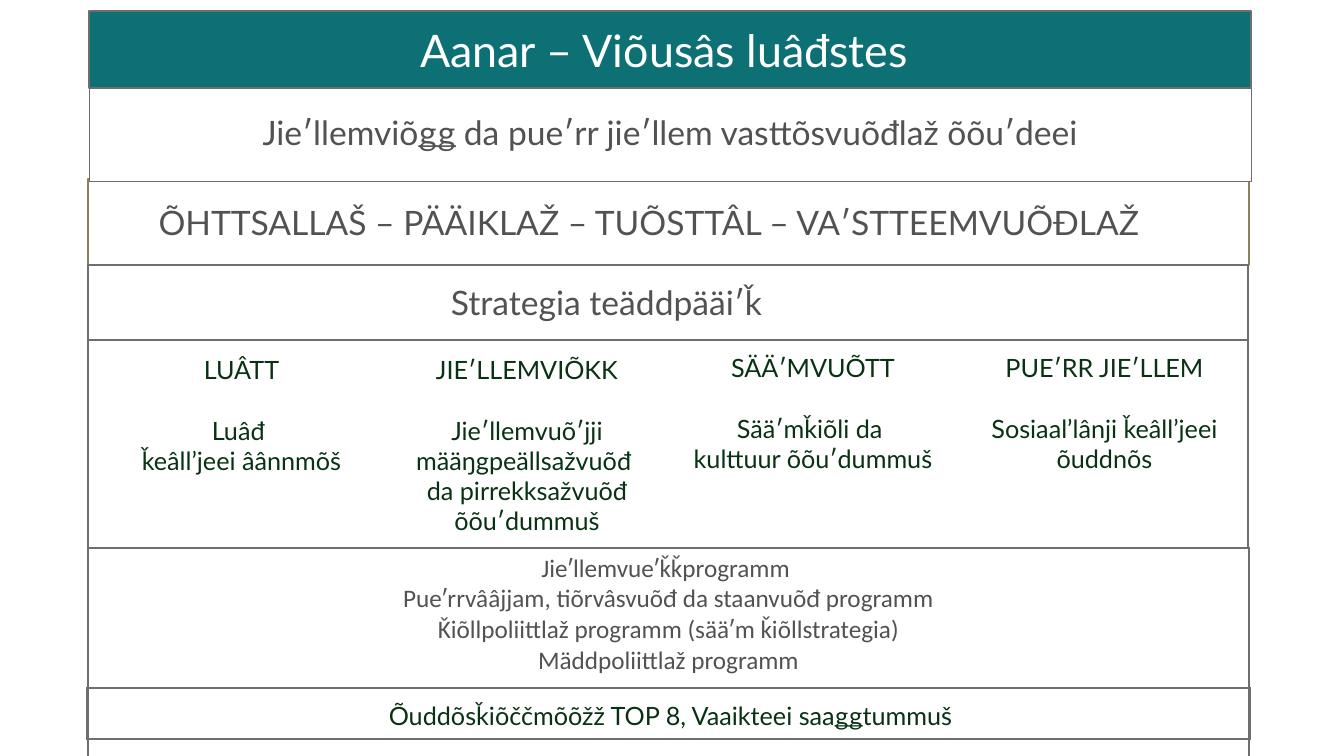
from dataclasses import dataclass

from lxml.etree import SubElement
from pptx import Presentation
from pptx.dml.color import RGBColor
from pptx.enum.shapes import MSO_SHAPE
from pptx.enum.text import MSO_ANCHOR, MSO_AUTO_SIZE, PP_ALIGN
from pptx.oxml.ns import qn
from pptx.util import Pt

PX = 914400 / 100.8
TITLE_ONLY = 5


@dataclass(frozen=True)
class Theme:
    font: str = "Lato"
    programme_font: str = "Calibri"
    white: str = "FFFFFF"
    teal: str = "0D7075"
    grey_text: str = "525252"
    green_text: str = "083213"
    rule: str = "6E6E6E"
    values_rule: str = "8B8160"
    title_size: int = 32
    heading_size: int = 24
    body_size: int = 18
    pillar_gap: int = 22


def px(*lengths):
    return [round(length * PX) for length in lengths]


def write(frame, *paragraphs, size, color, font=Theme.font, gap=0,
          align=PP_ALIGN.CENTER, anchor=MSO_ANCHOR.TOP):
    """Fill a frame with paragraphs, keeping gap points between them."""
    frame.word_wrap = True
    frame.auto_size = MSO_AUTO_SIZE.NONE
    frame.vertical_anchor = anchor
    for index, text in enumerate(paragraphs):
        paragraph = frame.add_paragraph() if index else frame.paragraphs[0]
        paragraph.text = text
        paragraph.alignment = align
        paragraph.space_before = Pt(gap if index else 0)
        paragraph.font.name = font
        paragraph.font.size = Pt(size)
        paragraph.font.color.rgb = RGBColor.from_string(color)


class StrategySlide:
    def __init__(self, theme):
        self.theme = theme
        self.deck = Presentation()
        self.deck.slide_width, self.deck.slide_height = px(1344, 756)
        self.slide = self.deck.slides.add_slide(self.deck.slide_layouts[TITLE_ONLY])
        self.shapes = self.slide.shapes

    def paint(self, shape, fill, line=None, width=1.0):
        shape.fill.solid()
        shape.fill.fore_color.rgb = RGBColor.from_string(fill)
        if line:
            shape.line.color.rgb = RGBColor.from_string(line)
            shape.line.width = Pt(width)
        else:
            shape.line.fill.background()

    def title(self, box, text):
        """Place the title as a band in front of the shapes added so far."""
        band = self.shapes.title
        band.left, band.top, band.width, band.height = px(*box)
        self.paint(band, self.theme.teal, self.theme.rule, 2)
        write(band.text_frame, text, size=self.theme.title_size,
              color=self.theme.white, anchor=MSO_ANCHOR.MIDDLE)
        self.shapes._spTree.append(band._element)

    def panel(self, box, *paragraphs, line=None, width=1.0, **text_format):
        panel = self.shapes.add_shape(MSO_SHAPE.RECTANGLE, *px(*box))
        panel.shadow.inherit = False
        self.paint(panel, self.theme.white, line, width)
        write(panel.text_frame, *paragraphs, **text_format)
        return panel

    def label(self, box, text, **text_format):
        label = self.shapes.add_textbox(*px(*box))
        write(label.text_frame, text, **text_format)

    def table(self, left, top, width, row_heights, sides="LRTB"):
        """Add a one-column table without fill, ruled on the given sides."""
        frame = self.shapes.add_table(len(row_heights), 1,
                                      *px(left, top, width, sum(row_heights)))
        table = frame.table
        table.first_row = table.horz_banding = False
        for row, height in zip(table.rows, px(*row_heights)):
            row.height = height
            cell = row.cells[0]
            for side in "LRTB":
                self.border(cell, side, side in sides)
            cell.fill.background()
        return table

    def border(self, cell, side, visible):
        line = SubElement(cell._tc.get_or_add_tcPr(), qn(f"a:ln{side}"), w=str(Pt(1)))
        if visible:
            fill = SubElement(line, qn("a:solidFill"))
            SubElement(fill, qn("a:srgbClr"), val=self.theme.rule)
        else:
            SubElement(line, qn("a:noFill"))


PILLARS = [
    ((94, 349, 295, 209), "LUÂTT", "Luâđ \vǩeâllʼjeei âânnmõš"),
    ((386, 349, 282, 209), "JIEʹLLEMVIÕKK",
     "Jieʹllemvuõʹjji määŋgpeällsažvuõđ \vda pirrekksažvuõđ õõuʹdummuš"),
    ((668, 347, 290, 211), "SÄÄʹMVUÕTT", "Sääʹmǩiõli da \vkulttuur õõuʹdummuš"),
    ((958, 347, 293, 211), "PUEʹRR JIEʹLLEM", "Sosiaalʼlânji ǩeâllʼjeei õuddnõs"),
]

PROGRAMMES = [
    "Jieʹllemvueʹǩǩprogramm ",
    "Pueʹrrvââjjam, tiõrvâsvuõđ da staanvuõđ programm",
    "Ǩiõllpoliittlaž programm (sääʹm ǩiõllstrategia)",
    "Mäddpoliittlaž programm",
]


def main():
    theme = Theme()
    strategy = StrategySlide(theme)
    heading = dict(size=theme.heading_size, color=theme.grey_text,
                   anchor=MSO_ANCHOR.MIDDLE)
    body = dict(size=theme.body_size, color=theme.green_text)

    values = strategy.panel((88, 179, 1161, 86),
                            "ÕHTTSALLAŠ – PÄÄIKLAŽ – TUÕSTTÂL – VAʹSTTEEMVUÕĐLAŽ",
                            line=theme.values_rule, **heading)
    values.text_frame.margin_right = px(49)[0]

    for box, name, goal in PILLARS:
        strategy.panel(box, name, goal, gap=theme.pillar_gap, **body)

    strategy.panel((89, 83, 1162, 98),
                   "Jieʹllemviõǥǥ da pueʹrr jieʹllem vasttõsvuõđlaž õõuʹdeei",
                   line=theme.rule, width=0.5, **heading)
    strategy.label((90, 680, 1161, 71), "Õuddõsǩiõččmõõžž TOP 8, Vaaikteei saaǥǥtummuš",
                   anchor=MSO_ANCHOR.MIDDLE, **body)
    strategy.title((89, 11, 1162, 77), "Aanar – Viõusâs luâđstes ")

    programmes = strategy.table(88, 548, 1161, [208], sides="LRT")
    write(programmes.cell(0, 0).text_frame, *PROGRAMMES, size=theme.body_size,
          color=theme.grey_text, font=theme.programme_font)

    strategy.table(87, 688, 1163, [51])

    focus = strategy.table(88, 265, 1160, [75, 208]).cell(0, 0)
    focus.margin_left = px(363)[0]
    focus.vertical_anchor = MSO_ANCHOR.MIDDLE
    write(focus.text_frame, "Strategia teäddpääiʹǩ", align=PP_ALIGN.LEFT, **heading)

    strategy.deck.save("out.pptx")


if __name__ == "__main__":
    main()
